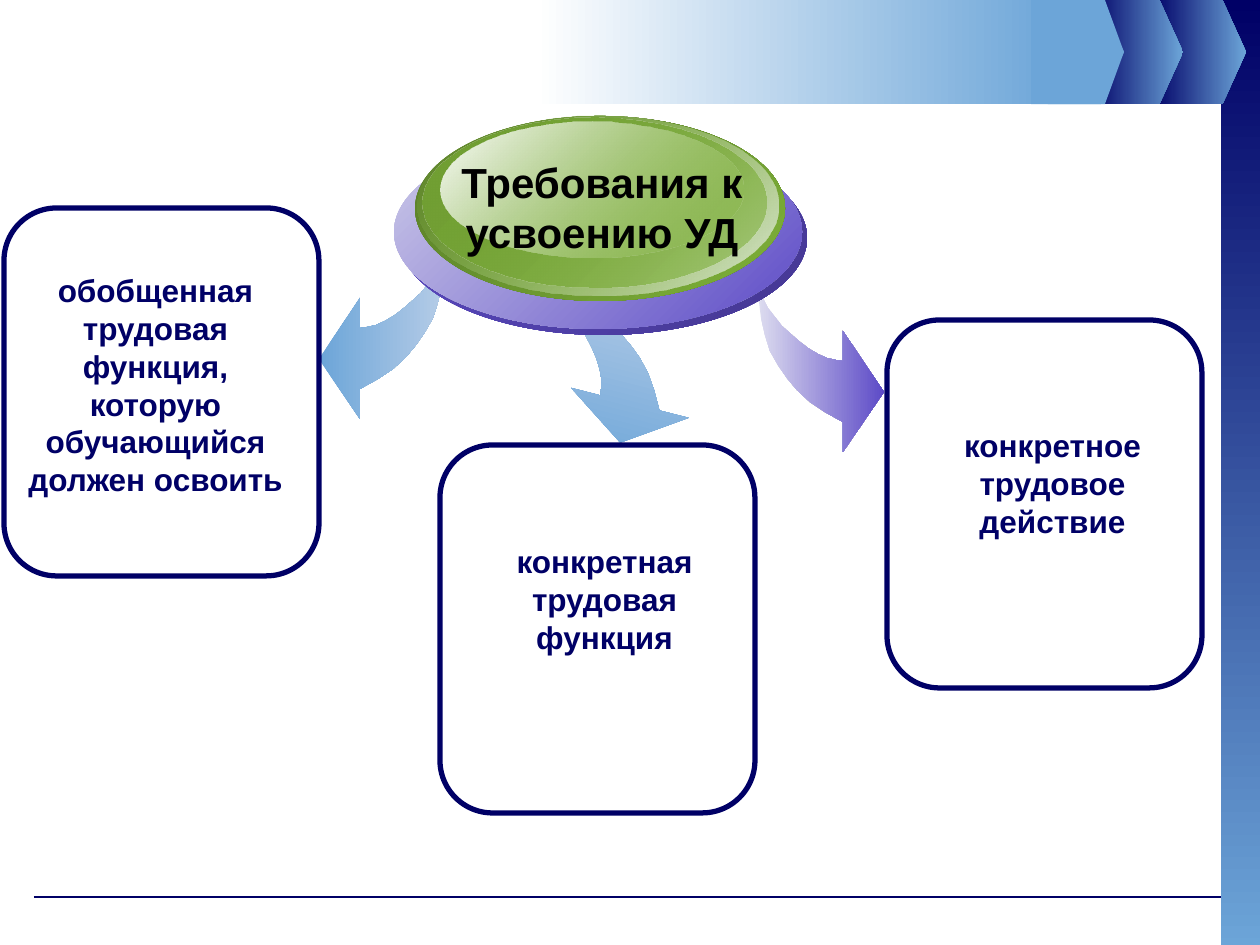
from lxml import etree
from pptx import Presentation
from pptx.dml.color import RGBColor
from pptx.enum.shapes import MSO_CONNECTOR, MSO_SHAPE
from pptx.enum.text import MSO_AUTO_SIZE, PP_ALIGN
from pptx.oxml.ns import qn
from pptx.util import Pt

PX = 914400 / 126
NAVY = RGBColor(0x00, 0x00, 0x66)
BLUE = RGBColor(0x6C, 0xA5, 0xD8)
PALE_BLUE = RGBColor(0xB5, 0xCC, 0xE7)
VIOLET = RGBColor(0x5D, 0x4B, 0xC7)
DARK_VIOLET = RGBColor(0x44, 0x37, 0x91)
LILAC = RGBColor(0xCC, 0xCA, 0xE8)
PALE_VIOLET = RGBColor(0xDC, 0xDB, 0xEF)
GREEN = RGBColor(0x7D, 0xB0, 0x38)
DARK_GREEN = RGBColor(0x59, 0x7E, 0x28)
MID_GREEN = RGBColor(0x71, 0x9F, 0x33)
PALE_GREEN = RGBColor(0xDD, 0xE7, 0xD5)
WHITE = RGBColor(0xFF, 0xFF, 0xFF)
BLACK = RGBColor(0x00, 0x00, 0x00)

RECT, PLATE = MSO_SHAPE.RECTANGLE, MSO_SHAPE.PENTAGON

# kind, (left, top, width, height), start colour, end colour, angle
FRAME = [
    (RECT, (1221, 0, 39, 949), NAVY, BLUE, 90),
    (PLATE, (1152, 0, 94, 104), NAVY, BLUE, 0),
    (PLATE, (1089, 0, 94, 104), NAVY, BLUE, 0),
    (PLATE, (1048, 0, 76, 104), BLUE, BLUE, 0),
    (RECT, (535, 0, 527, 104), WHITE, BLUE, 0),
    (PLATE, (1031, 0, 93, 104), BLUE, BLUE, 0),
]

# Curved arrow: offsets away from its tail, drawn to the left or to the right
ARROW = [(0, 0), (0, 19), (2, 36), (6, 53), (11, 69), (19, 83), (28, 96), (38, 108),
         (51, 120), (66, 130), (84, 140), (84, 170), (125, 110), (84, 49), (84, 79),
         (77, 78), (68, 76), (59, 72), (49, 66), (40, 59), (32, 52), (23, 44),
         (16, 35), (9, 26), (5, 18), (1, 8)]
# tail x, tail y, direction, rotation, start colour, end colour
ARROWS = [
    (444, 249, -1, 0, BLUE, PALE_BLUE),
    (674, 291, -1, 284.3, BLUE, PALE_BLUE),
    (759, 282, 1, 0, PALE_VIOLET, VIOLET),
]

# box, start colour, end colour, start opacity, end opacity
ELLIPSES = [
    ((399, 141, 408, 194), VIOLET, DARK_VIOLET, 100, 100),
    ((394, 135, 408, 194), LILAC, VIOLET, 100, 100),
    ((415, 116, 370, 185), DARK_GREEN, GREEN, 100, 100),
    ((418, 116, 360, 180), GREEN, PALE_GREEN, 0, 100),
    ((422, 118, 344, 169), MID_GREEN, GREEN, 100, 48),
    ((441, 122, 302, 136), WHITE, GREEN, 100, 38),
]

TITLE = ("Требования к усвоению УД", (444, 150, 316, 115))
CARD_SIZE = (315, 368)
# card left and top, text, text box
CARDS = [
    ((4, 208), "обобщенная трудовая функция, которую обучающийся должен освоить",
     (15, 265, 281, 246)),
    ((440, 445), "конкретная трудовая функция", (464, 536, 281, 127)),
    ((887, 320), "конкретное трудовое действие", (912, 420, 281, 127)),
]


def emu(values):
    return [round(v * PX) for v in values]


def fill_gradient(sp, start, end, angle, opacities=(100, 100)):
    """Two-stop linear gradient without outline; angle runs clockwise."""
    sp.shadow.inherit = False
    sp.line.fill.background()
    if start == end:
        sp.fill.solid()
        sp.fill.fore_color.rgb = start
        return
    sp.fill.gradient()
    grad = sp._element.spPr.find(qn("a:gradFill"))
    grad.set("rotWithShape", "1")
    for child in list(grad):
        grad.remove(child)
    stops = etree.SubElement(grad, qn("a:gsLst"))
    for pos, color, opacity in zip((0, 100000), (start, end), opacities):
        stop = etree.SubElement(stops, qn("a:gs"), pos=str(pos))
        clr = etree.SubElement(stop, qn("a:srgbClr"), val=str(color))
        if opacity < 100:
            etree.SubElement(clr, qn("a:alpha"), val=str(opacity * 1000))
    etree.SubElement(grad, qn("a:lin"), ang=str(angle * 60000), scaled="0")


def add_label(shapes, text, box, size, color):
    tf = shapes.add_textbox(*emu(box)).text_frame
    tf.word_wrap = True
    tf.auto_size = MSO_AUTO_SIZE.SHAPE_TO_FIT_TEXT
    tf.text = text
    p = tf.paragraphs[0]
    p.alignment = PP_ALIGN.CENTER
    font = p.runs[0].font
    font.name, font.size, font.bold = "Arial", Pt(size), True
    font.color.rgb = color


def add_arrow(shapes, x, y, direction, rotation, start, end):
    points = [tuple(emu((x + direction * dx, y + dy))) for dx, dy in ARROW]
    builder = shapes.build_freeform(*points[0], scale=1.0)
    builder.add_line_segments(points[1:], close=True)
    sp = builder.convert_to_shape()
    sp.rotation = rotation
    fill_gradient(sp, start, end, 0)


def add_card(shapes, corner):
    sp = shapes.add_shape(MSO_SHAPE.ROUNDED_RECTANGLE, *emu(corner + CARD_SIZE))
    sp.adjustments[0] = 0.167
    sp.shadow.inherit = False
    sp.fill.background()
    sp.line.color.rgb = NAVY
    sp.line.width = Pt(3)


def main():
    prs = Presentation()
    prs.slide_width, prs.slide_height = emu((1260, 945))
    shapes = prs.slides.add_slide(prs.slide_layouts[6]).shapes

    rule = shapes.add_connector(MSO_CONNECTOR.STRAIGHT, *emu((34, 897, 1221, 897)))
    rule.line.color.rgb = NAVY
    rule.line.width = Pt(0.75)
    etree.SubElement(rule._element.spPr, qn("a:effectLst"))

    for kind, box, start, end, angle in FRAME:
        sp = shapes.add_shape(kind, *emu(box))
        if kind == PLATE:
            sp.adjustments[0] = 0.25
        fill_gradient(sp, start, end, angle)

    for arrow in ARROWS:
        add_arrow(shapes, *arrow)

    for box, start, end, *opacities in ELLIPSES:
        sp = shapes.add_shape(MSO_SHAPE.OVAL, *emu(box))
        fill_gradient(sp, start, end, 45, opacities)
    add_label(shapes, *TITLE, 24, BLACK)

    for corner, text, box in CARDS:
        add_card(shapes, corner)
        add_label(shapes, text, box, 18, NAVY)

    prs.save("out.pptx")


if __name__ == "__main__":
    main()
